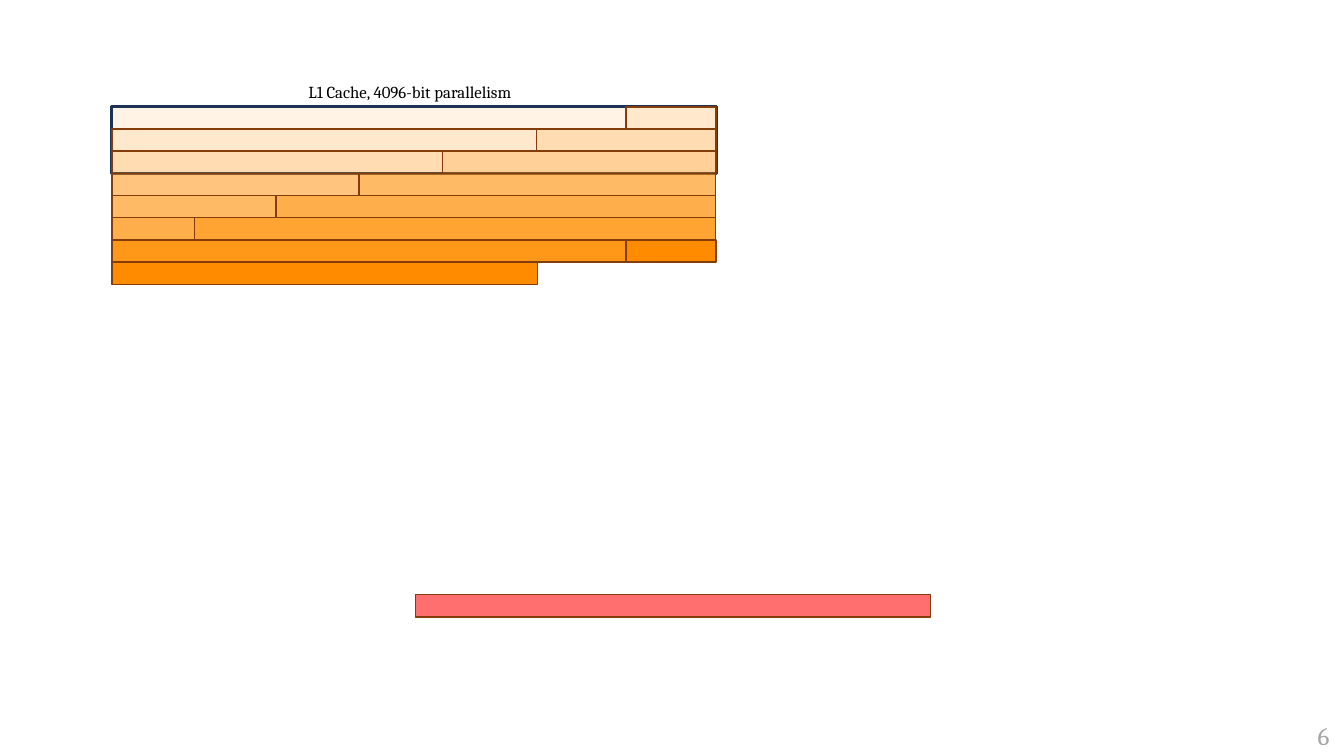
from typing import NamedTuple, Optional

from lxml.etree import SubElement
from pptx import Presentation
from pptx.dml.color import RGBColor as Rgb
from pptx.enum.shapes import MSO_SHAPE as Kind
from pptx.enum.text import MSO_AUTO_SIZE as Fit, PP_ALIGN as Align
from pptx.oxml.ns import qn
from pptx.util import Emu, Pt

PX = 9144  # 100 px to the inch
FONT = "Cambria"
HUES = {
    "cache": "FF8C00",
    "block": "FF1414",
    "edge": "843C0B",
    "frame": "1E3256",
    "text": "000000",
    "page": "A5A5A5",
}
LEFT, RIGHT, TOP, HIGH = 111, 710, 106, 22


class Row(NamedTuple):
    split: int
    first: int  # opacity in percent, left of the split
    rest: Optional[int]  # opacity right of the split


class Bar(NamedTuple):
    left: int
    top: int
    width: int
    height: int
    fill: Optional[str]
    alpha: int = 100
    edge: str = "edge"
    weight: float = 1


class Label(NamedTuple):
    left: int
    top: int
    width: int
    height: int
    text: str
    size: int
    hue: str


ROWS = [
    Row(621, 10, 20),
    Row(532, 20, 30),
    Row(439, 30, 40),
    Row(356, 50, 60),
    Row(274, 60, 70),
    Row(193, 70, 80),
    Row(621, 90, 100),
    Row(533, 100, None),
]
FRAME = Bar(LEFT, TOP, 600, 3 * HIGH, None, edge="frame", weight=2.25)
BLOCK = Bar(412, 590, 511, HIGH, "block", 61)
LABELS = [
    Label(296, 76, 272, 30, "L1 Cache, 4096-bit parallelism", 12, "text"),
    Label(1297, 710, 36, 40, "6", 18, "page"),
]


def px(count: int) -> Emu:
    return Emu(count * PX)


def hue(name: str) -> Rgb:
    return Rgb.from_string(HUES[name])


def cells() -> list[Bar]:
    bars = []
    for i, row in enumerate(ROWS):
        top = TOP + i * HIGH
        bars.append(Bar(LEFT, top, row.split - LEFT, HIGH, "cache", row.first))
        if row.rest is not None:
            bars.append(Bar(row.split, top, RIGHT - row.split, HIGH, "cache", row.rest))
    return bars


def draw(shapes, bar: Bar) -> None:
    box = shapes.add_shape(Kind.RECTANGLE, *map(px, bar[:4]))
    box.shadow.inherit = False
    box.line.color.rgb = hue(bar.edge)
    box.line.width = Pt(bar.weight)
    if bar.fill is None:
        box.fill.background()
        return
    box.fill.solid()
    box.fill.fore_color.rgb = hue(bar.fill)
    if bar.alpha < 100:
        tint = box.fill._xPr.find(qn("a:solidFill"))[0]
        SubElement(tint, qn("a:alpha"), val=str(bar.alpha * 1000))


def write(shapes, label: Label) -> None:
    frame = shapes.add_textbox(*map(px, label[:4])).text_frame
    frame.word_wrap = True
    frame.auto_size = Fit.SHAPE_TO_FIT_TEXT
    para = frame.paragraphs[0]
    para.alignment = Align.LEFT
    run = para.add_run()
    run.text = label.text
    run.font.name = FONT
    run.font.size = Pt(label.size)
    run.font.color.rgb = hue(label.hue)


def main() -> None:
    deck = Presentation()
    deck.slide_width, deck.slide_height = px(1333), px(750)
    shapes = deck.slides.add_slide(deck.slide_layouts[6]).shapes

    # Cache rows, with the frame just above the first bar
    head, *tail = cells()
    for bar in [head, FRAME, *tail, BLOCK]:
        draw(shapes, bar)

    # Caption and page number
    for label in LABELS:
        write(shapes, label)

    deck.save("out.pptx")


if __name__ == "__main__":
    main()
